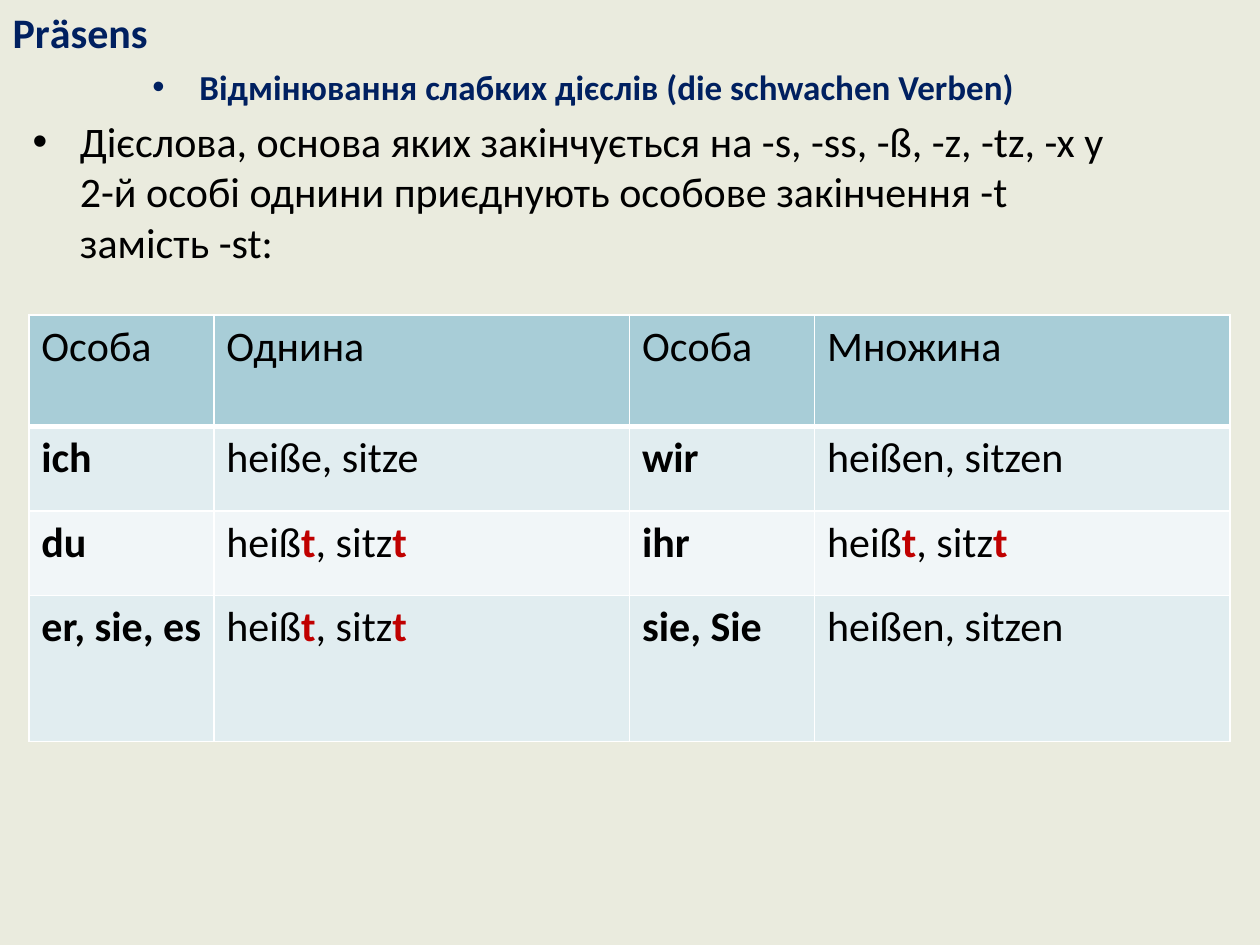
from dataclasses import dataclass

from lxml.etree import SubElement
from pptx import Presentation
from pptx.dml.color import RGBColor
from pptx.enum.text import MSO_ANCHOR, PP_ALIGN
from pptx.oxml.ns import qn
from pptx.util import Cm, Pt


@dataclass(frozen=True)
class Theme:
    font: str = "Calibri"
    background: str = "EAEBDE"
    heading: str = "002060"
    text: str = "000000"
    ending: str = "C00000"
    header_fill: str = "A8CDD7"
    odd_fill: str = "E1EDF0"
    even_fill: str = "F1F6F8"
    border: str = "FFFFFF"
    large: int = 24
    medium: int = 20


THEME = Theme()
COLUMN_WIDTHS = (3.73, 8.38) * 2
ROW_HEIGHTS = (2.25, 1.7, 1.7, 2.95)
# Personal endings to highlight stand between asterisks.
CONJUGATION = (
    ("Особа", "Однина", "Особа", "Множина"),
    ("ich", "heiße, sitze", "wir", "heißen, sitzen"),
    ("du", "heiß*t*, sitz*t*", "ihr", "heiß*t*, sitz*t*"),
    ("er, sie, es", "heiß*t*, sitz*t*", "sie, Sie", "heißen, sitzen"),
)


def format_span(span, color, size=THEME.large, bold=False):
    font = span.font
    font.name = THEME.font
    font.size = Pt(size)
    font.bold = bold
    font.color.rgb = RGBColor.from_string(color)


def place(shape, left, top, width, height):
    shape.left, shape.top = Cm(left), Cm(top)
    shape.width, shape.height = Cm(width), Cm(height)


def add_title(page, text):
    title = page.shapes.title
    place(title, 0, 0, 3.58, 1.27)
    frame = title.text_frame
    frame.text = text
    frame.word_wrap = False
    frame.vertical_anchor = MSO_ANCHOR.TOP
    para = frame.paragraphs[0]
    para.alignment = PP_ALIGN.LEFT
    format_span(para.runs[0], THEME.heading, bold=True)


def format_bullet(para, text, color, size, bold, alignment):
    para.text = text
    para.alignment = alignment
    para.space_before = Pt(size * 0.2)
    format_span(para.runs[0], color, size, bold)
    properties = para._p.get_or_add_pPr()
    properties.set("marL", str(Cm(0.95)))
    properties.set("indent", str(Cm(-0.95)))
    SubElement(properties, qn("a:buFont"), typeface="Arial")
    SubElement(properties, qn("a:buChar"), char="•")


def add_rule(page):
    box = page.shapes.add_textbox(Cm(0.41), Cm(1.19), Cm(22.86), Cm(5))
    frame = box.text_frame
    frame.word_wrap = True
    format_bullet(
        frame.paragraphs[0],
        "Відмінювання слабких дієслів (die schwachen Verben) ",
        THEME.heading, THEME.medium, True, PP_ALIGN.CENTER,
    )
    format_bullet(
        frame.add_paragraph(),
        "Дієслова, основа яких закінчується на -s, -ss, -ß, -z, -tz, -x у "
        "2-й особі однини приєднують особове закінчення -t замість -st:",
        THEME.text, THEME.large, False, PP_ALIGN.LEFT,
    )


def set_borders(cell, top, bottom):
    """Draw the four cell edges; the fill must be set afterwards."""
    properties = cell._tc.get_or_add_tcPr()
    for edge, width in (("lnL", 1), ("lnR", 1), ("lnT", top), ("lnB", bottom)):
        line = SubElement(properties, qn(f"a:{edge}"), w=str(Pt(width)))
        fill = SubElement(line, qn("a:solidFill"))
        SubElement(fill, qn("a:srgbClr"), val=THEME.border)


def fill_cell(cell, text, fill, bold):
    cell.fill.solid()
    cell.fill.fore_color.rgb = RGBColor.from_string(fill)
    para = cell.text_frame.paragraphs[0]
    for index, part in enumerate(text.split("*")):
        if part:
            is_ending = index % 2 == 1
            span = para.add_run()
            span.text = part
            format_span(span, THEME.ending if is_ending else THEME.text,
                        bold=bold or is_ending)


def add_conjugation_table(page):
    table = page.shapes.add_table(
        len(ROW_HEIGHTS), len(COLUMN_WIDTHS), Cm(0.58), Cm(6.35),
        Cm(sum(COLUMN_WIDTHS)), Cm(sum(ROW_HEIGHTS)),
    ).table
    for column, width in zip(table.columns, COLUMN_WIDTHS):
        column.width = Cm(width)
    fills = (THEME.header_fill, THEME.odd_fill, THEME.even_fill, THEME.odd_fill)
    for row, texts in enumerate(CONJUGATION):
        table.rows[row].height = Cm(ROW_HEIGHTS[row])
        for column, text in enumerate(texts):
            cell = table.cell(row, column)
            set_borders(cell, top=3 if row == 1 else 1, bottom=3 if row == 0 else 1)
            is_pronoun = row > 0 and column % 2 == 0
            fill_cell(cell, text, fills[row], is_pronoun)


def main():
    deck = Presentation()
    deck.slide_width, deck.slide_height = Cm(25.4), Cm(19.05)
    page = deck.slides.add_slide(deck.slide_layouts.get_by_name("Title Only"))
    page.background.fill.solid()
    page.background.fill.fore_color.rgb = RGBColor.from_string(THEME.background)
    add_title(page, "Prӓsens")
    add_rule(page)
    add_conjugation_table(page)
    deck.save("out.pptx")


if __name__ == "__main__":
    main()
